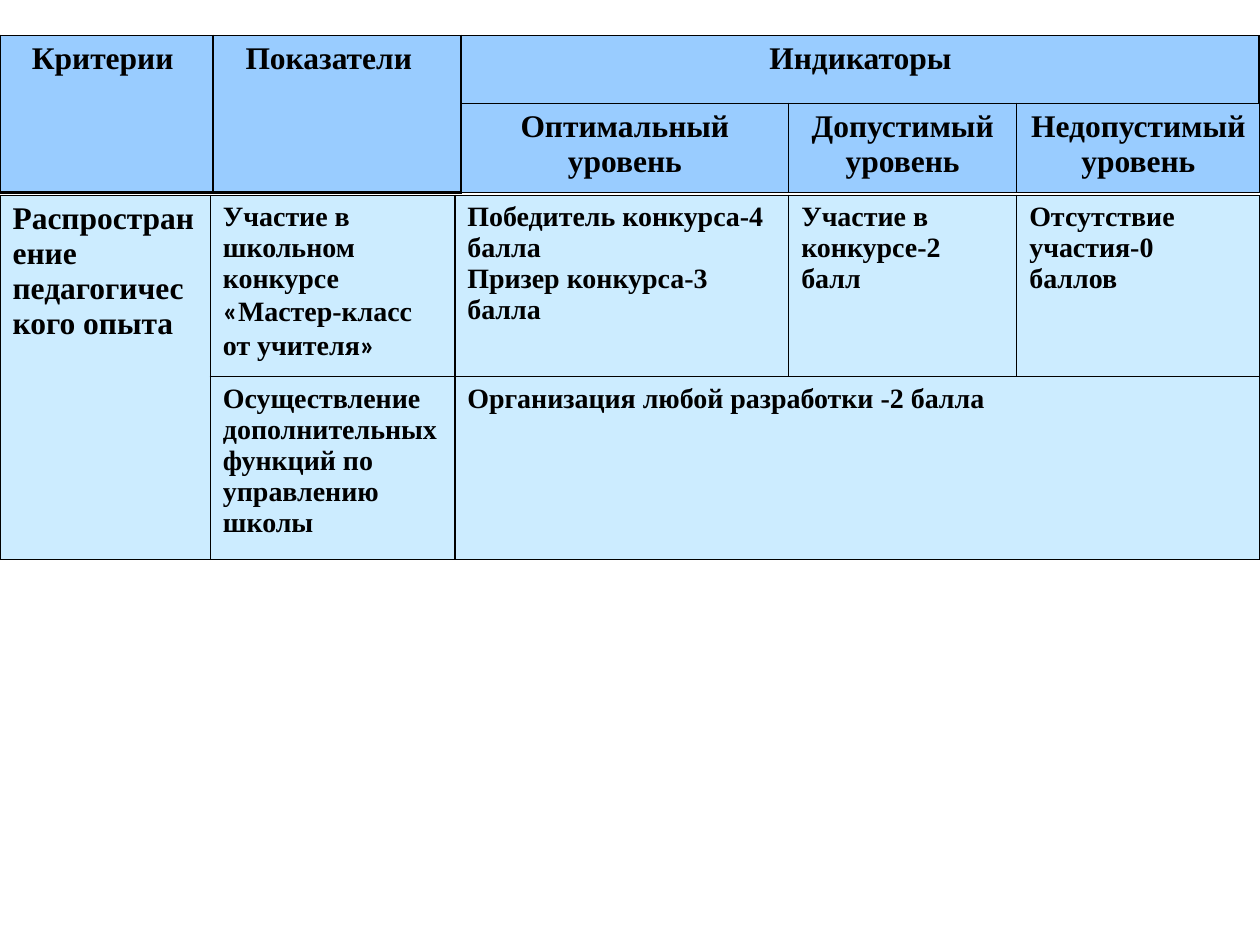
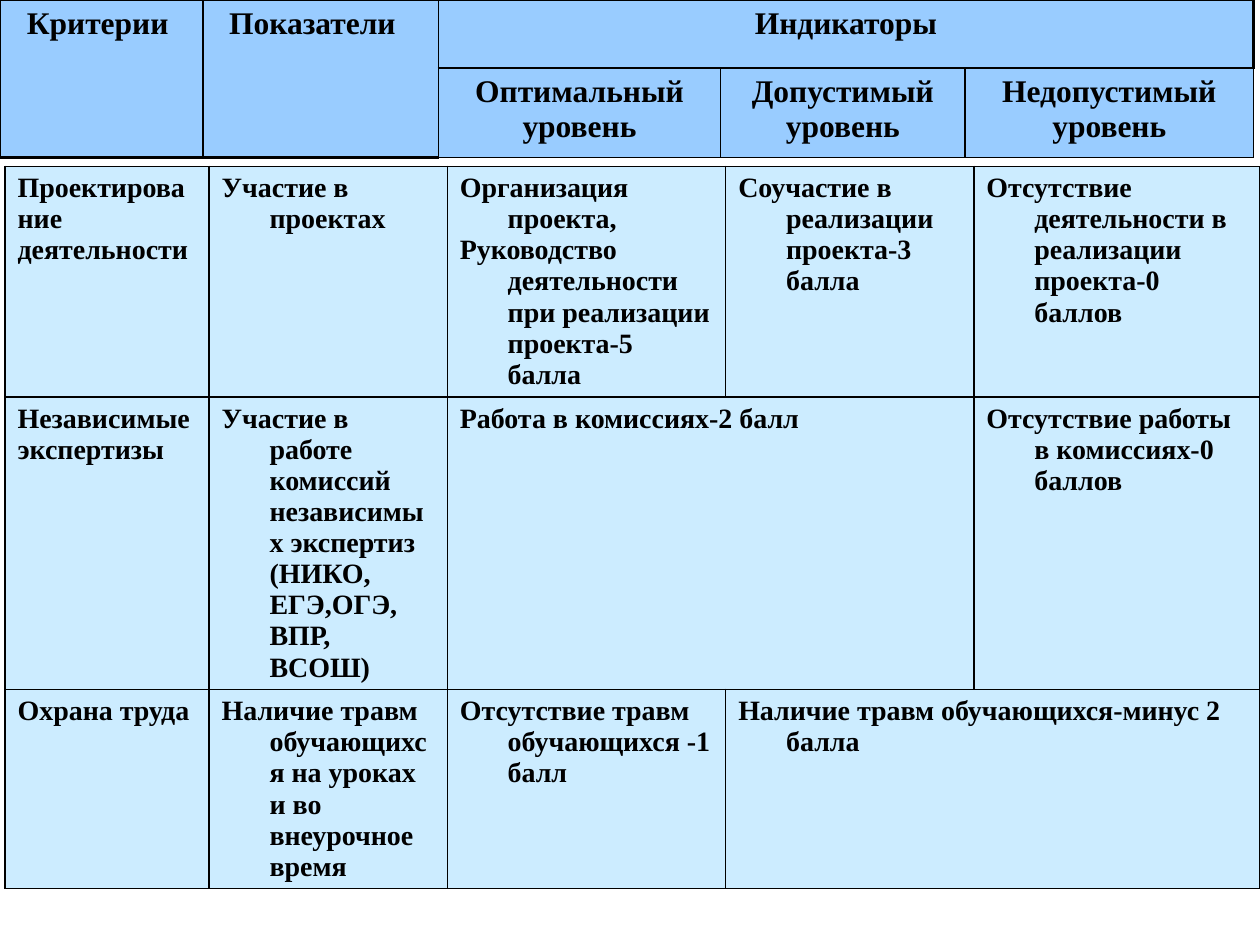
"""Builds two slides of teacher assessment criteria, each a header table over a body table."""
import itertools

import pptx
import pptx.dml.color
import pptx.enum.text
import pptx.oxml
import pptx.oxml.ns
import pptx.util

Inches = pptx.util.Inches
Pt = pptx.util.Pt

BLACK = pptx.dml.color.RGBColor(0x00, 0x00, 0x00)
HEADER_BLUE = pptx.dml.color.RGBColor(0x99, 0xCC, 0xFF)
BODY_BLUE = pptx.dml.color.RGBColor(0xCC, 0xEC, 0xFF)
THIN, THICK = 1, 2.25
HANG = 0.38
QUOTES = "«»"

# Each cell: row, column, rows spanned, columns spanned, paragraphs.
HEADER_CELLS = [
    (0, 0, 2, 1, ["Критерии"]),
    (0, 1, 2, 1, ["Показатели"]),
    (0, 2, 1, 3, ["Индикаторы"]),
    (1, 2, 1, 1, ["Оптимальный уровень"]),
    (1, 3, 1, 1, ["Допустимый уровень"]),
    (1, 4, 1, 1, ["Недопустимый уровень"]),
]
EXPERIENCE_CELLS = [
    (0, 0, 2, 1, ["Распространение педагогического опыта"]),
    (0, 1, 1, 1, ["Участие в школьном конкурсе «Мастер-класс от учителя»"]),
    (0, 2, 1, 1, ["Победитель конкурса-4 балла", "Призер конкурса-3 балла"]),
    (0, 3, 1, 1, ["Участие в конкурсе-2 балл"]),
    (0, 4, 1, 1, ["Отсутствие участия-0 баллов"]),
    (1, 1, 1, 1, ["Осуществление дополнительных функций по управлению школы"]),
    (1, 2, 1, 3, ["Организация любой разработки -2 балла"]),
]
ACTIVITY_CELLS = [
    (0, 0, 1, 1, ["Проектирование деятельности"]),
    (0, 1, 1, 1, ["Участие в проектах"]),
    (0, 2, 1, 1, ["Организация проекта,",
                  "Руководство деятельности при реализации проекта-5 балла"]),
    (0, 3, 1, 1, ["Соучастие в реализации проекта-3 балла"]),
    (0, 4, 1, 1, ["Отсутствие деятельности в реализации проекта-0 баллов"]),
    (1, 0, 1, 1, ["Независимые экспертизы"]),
    (1, 1, 1, 1, ["Участие в работе комиссий независимых экспертиз "
                  "(НИКО, ЕГЭ,ОГЭ, ВПР, ВСОШ)"]),
    (1, 2, 1, 2, ["Работа в комиссиях-2 балл"]),
    (1, 4, 1, 1, ["Отсутствие работы в комиссиях-0 баллов"]),
    (2, 0, 1, 1, ["Охрана труда"]),
    (2, 1, 1, 1, ["Наличие травм обучающихся на уроках и во внеурочное время"]),
    (2, 2, 1, 1, ["Отсутствие травм обучающихся -1 балл"]),
    (2, 3, 1, 2, ["Наличие травм обучающихся-минус 2 балла"]),
]

HEADER = {"cells": HEADER_CELLS, "rows": [0.54, 0.71], "fill": HEADER_BLUE,
          "sizes": [18] * 5, "header": True}
SLIDES = [
    [
        {**HEADER, "at": (0, 0.28), "cols": [1.69, 1.97, 2.6, 1.81, 1.93]},
        {"cells": EXPERIENCE_CELLS, "at": (0, 1.55), "rows": [1.44, 1.45],
         "cols": [1.67, 1.94, 2.65, 1.81, 1.93], "fill": BODY_BLUE,
         "sizes": [18, 16, 16, 16, 16]},
    ],
    [
        {"cells": ACTIVITY_CELLS, "at": (0.04, 1.32), "rows": [1.83, 2.32, 1.58],
         "cols": [1.62, 1.89, 2.21, 1.97, 2.27], "fill": BODY_BLUE,
         "sizes": [16] * 5, "hanging": True},
        {**HEADER, "at": (0, 0), "cols": [1.61, 1.87, 2.24, 1.94, 2.29]},
    ],
]
HEADER_RIGHT_MARGINS = {0: 0.16, 1: 0.23}


def set_borders(cell, thick_side):
    tc_pr = cell._tc.get_or_add_tcPr()
    for side in "LRTB":
        width = Pt(THICK if side == thick_side else THIN)
        tc_pr.append(pptx.oxml.parse_xml(
            f'<a:ln{side} {pptx.oxml.ns.nsdecls("a")} w="{width}">'
            f'<a:solidFill><a:srgbClr val="{BLACK}"/></a:solidFill></a:ln{side}>'))


def write_text(cell, paragraphs, size, centred, hanging):
    tf = cell.text_frame
    for i, text in enumerate(paragraphs):
        p = tf.add_paragraph() if i else tf.paragraphs[0]
        if centred:
            p.alignment = pptx.enum.text.PP_ALIGN.CENTER
        if hanging:
            p_pr = p._p.get_or_add_pPr()
            p_pr.set("marL", str(Inches(HANG)))
            p_pr.set("indent", str(Inches(-HANG)))
        for quoted, chars in itertools.groupby(text, lambda ch: ch in QUOTES):
            r = p.add_run()
            r.text = "".join(chars)
            font = {"name": "Calibri" if quoted else "Times New Roman",
                    "size": Pt(size), "bold": True}
            for name, value in font.items():
                setattr(r.font, name, value)
            r.font.color.rgb = BLACK


def add_criteria_table(slide, spec):
    rows, cols = spec["rows"], spec["cols"]
    header = spec.get("header", False)
    left, top = spec["at"]
    table = slide.shapes.add_table(
        len(rows), len(cols), Inches(left), Inches(top),
        Inches(sum(cols)), Inches(sum(rows))).table
    table.first_row = table.horz_banding = False
    for row, height in zip(table.rows, rows):
        row.height = Inches(height)
    for col, width in zip(table.columns, cols):
        col.width = Inches(width)
    for row, col, row_span, col_span, paragraphs in spec["cells"]:
        thick_side = None
        if header and row_span > 1:
            thick_side = "B"
        elif header and col_span > 1:
            thick_side = "R"
        for r, c in itertools.product(range(row, row + row_span),
                                      range(col, col + col_span)):
            part = table.cell(r, c)
            set_borders(part, thick_side)
            part.fill.solid()
            part.fill.fore_color.rgb = spec["fill"]
        cell = table.cell(row, col)
        if row_span * col_span > 1:
            cell.merge(table.cell(row + row_span - 1, col + col_span - 1))
        if header and col in HEADER_RIGHT_MARGINS:
            cell.margin_right = Inches(HEADER_RIGHT_MARGINS[col])
        write_text(cell, paragraphs, spec["sizes"][col], header,
                   spec.get("hanging", False) and col > 0)


def main():
    prs = pptx.Presentation()
    prs.slide_width, prs.slide_height = Inches(10), Inches(7.5)
    for tables in SLIDES:
        slide = prs.slides.add_slide(prs.slide_layouts[6])
        for table in tables:
            add_criteria_table(slide, table)
    prs.save("out.pptx")


if __name__ == "__main__":
    main()
